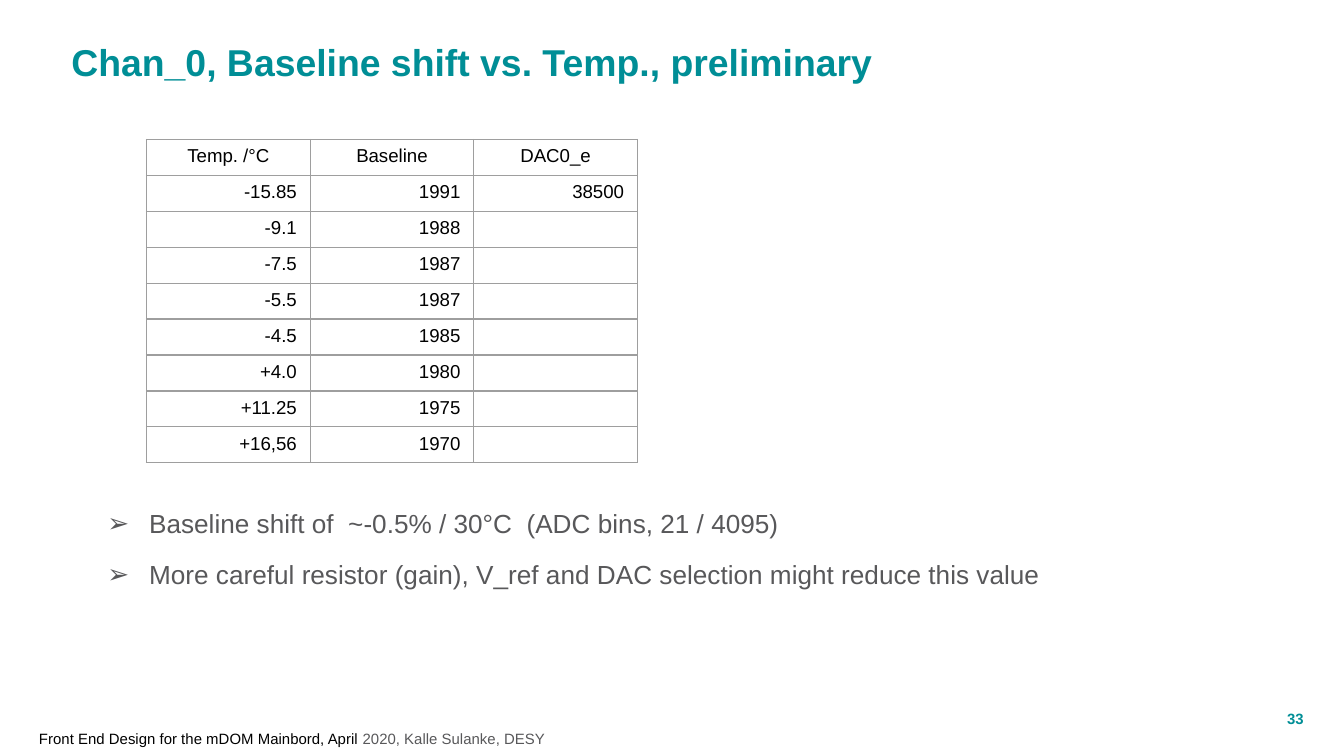
"""Build the slide on baseline shift against temperature."""
from dataclasses import dataclass

from lxml.etree import SubElement
from pptx import Presentation
from pptx.dml.color import RGBColor
from pptx.enum.text import MSO_ANCHOR as Anchor, PP_ALIGN as Align
from pptx.oxml.ns import qn
from pptx.util import Pt

TEAL = RGBColor(0x00, 0x8E, 0x96)
GREY = RGBColor(0x58, 0x58, 0x5A)
BLACK = RGBColor(0x00, 0x00, 0x00)
BORDER = RGBColor(0x9E, 0x9E, 0x9E)
FONT = "Arial"

HEADER = ("Temp. /°C", "Baseline", "DAC0_e")
READINGS = (
    ("-15.85", "1991", "38500"),
    ("-9.1", "1988", ""),
    ("-7.5", "1987", ""),
    ("-5.5", "1987", ""),
    ("-4.5", "1985", ""),
    ("+4.0", "1980", ""),
    ("+11.25", "1975", ""),
    ("+16,56", "1970", ""),
)
COL_WIDTH, ROW_HEIGHT = 87.65, 18.84


@dataclass(frozen=True)
class Run:
    text: str
    color: RGBColor


@dataclass(frozen=True)
class TextBlock:
    left: float
    top: float
    width: float
    height: float
    paragraphs: tuple[tuple[Run, ...], ...]
    size: float
    bold: bool = False
    align: Align = Align.LEFT
    anchor: Anchor = Anchor.TOP
    line_spacing: float = 1.0
    gap: float = 0
    bullet: str = ""


BLOCKS = (
    TextBlock(20.9, 389.5, 497, 10.8,
              ((Run("Front End Design for the mDOM Mainbord, April ", BLACK),
                Run("2020, Kalle Sulanke, DESY", GREY)),),
              size=8, anchor=Anchor.BOTTOM),
    TextBlock(38.2, 14.4, 536.4, 33.8,
              ((Run("Chan_0, Baseline shift vs. Temp., preliminary", TEAL),),),
              size=20, bold=True, anchor=Anchor.MIDDLE, line_spacing=1.15),
    TextBlock(670.3, 376.6, 28.1, 13, ((Run("33", TEAL),),),
              size=8, bold=True, align=Align.RIGHT, anchor=Anchor.BOTTOM),
    TextBlock(39.6, 270.7, 659.5, 77.8,
              ((Run("Baseline shift of  ~-0.5% / 30°C  (ADC bins, 21 / 4095)", GREY),),
               (Run("More careful resistor (gain), V_ref and DAC selection "
                    "might reduce this value", GREY),)),
              size=14, line_spacing=1.08, gap=9, bullet="➢"),
)


def add_run(p, text: str, *, size: float, color: RGBColor, bold: bool = False) -> None:
    """Append a formatted run to a paragraph."""
    r = p.add_run()
    r.text = text
    r.font.name, r.font.size, r.font.bold = FONT, Pt(size), bold
    r.font.color.rgb = color


def set_bullet(p, char: str, color: RGBColor) -> None:
    """Give a paragraph a hanging bullet."""
    pPr = p._p.get_or_add_pPr()
    pPr.set("marL", str(Pt(40.3)))
    pPr.set("indent", str(Pt(-22.3)))
    clr = SubElement(pPr, qn("a:buClr"))
    SubElement(clr, qn("a:srgbClr"), val=str(color))
    SubElement(pPr, qn("a:buFont"), typeface=FONT)
    SubElement(pPr, qn("a:buChar"), char=char)


def add_text(s, block: TextBlock) -> None:
    """Draw a text block without insets."""
    sp = s.shapes.add_textbox(Pt(block.left), Pt(block.top), Pt(block.width), Pt(block.height))
    tf = sp.text_frame
    tf.word_wrap = True
    tf.vertical_anchor = block.anchor
    tf.margin_left = tf.margin_right = tf.margin_top = tf.margin_bottom = Pt(0)
    for i, runs in enumerate(block.paragraphs):
        p = tf.add_paragraph() if i else tf.paragraphs[0]
        p.alignment, p.line_spacing = block.align, block.line_spacing
        if i:
            p.space_before = Pt(block.gap)
        if block.bullet:
            set_bullet(p, block.bullet, runs[0].color)
        for run in runs:
            add_run(p, run.text, size=block.size, color=run.color, bold=block.bold)


def set_borders(cell) -> None:
    """Outline a cell on all four sides."""
    tcPr = cell._tc.get_or_add_tcPr()
    for side in ("lnL", "lnR", "lnT", "lnB"):
        ln = SubElement(tcPr, qn(f"a:{side}"), w=str(Pt(0.75)))
        fill = SubElement(ln, qn("a:solidFill"))
        SubElement(fill, qn("a:srgbClr"), val=str(BORDER))


def fill_cell(cell, text: str, align: Align) -> None:
    """Write one cell with its borders and no fill."""
    set_borders(cell)
    cell.fill.background()
    p = cell.text_frame.paragraphs[0]
    p.alignment = align
    if text:
        add_run(p, text, size=10, color=BLACK)
    else:
        p._p.get_or_add_endParaRPr().set("sz", "1000")


def add_readings(s) -> None:
    """Draw the table of readings."""
    rows = (HEADER, *READINGS)
    table = s.shapes.add_table(len(rows), len(HEADER), Pt(78.5), Pt(74.7),
                               Pt(COL_WIDTH * len(HEADER)), Pt(ROW_HEIGHT * len(rows))).table
    table.first_row = table.horz_banding = False
    for col in table.columns:
        col.width = Pt(COL_WIDTH)
    for i, values in enumerate(rows):
        table.rows[i].height = Pt(ROW_HEIGHT)
        for j, value in enumerate(values):
            fill_cell(table.cell(i, j), value, Align.RIGHT if i else Align.CENTER)


def main() -> None:
    """Build and save the presentation."""
    prs = Presentation()
    prs.slide_width, prs.slide_height = Pt(720), Pt(405)
    s = prs.slides.add_slide(prs.slide_layouts[6])
    for block in BLOCKS:
        add_text(s, block)
    add_readings(s)
    prs.save("out.pptx")


if __name__ == "__main__":
    main()
